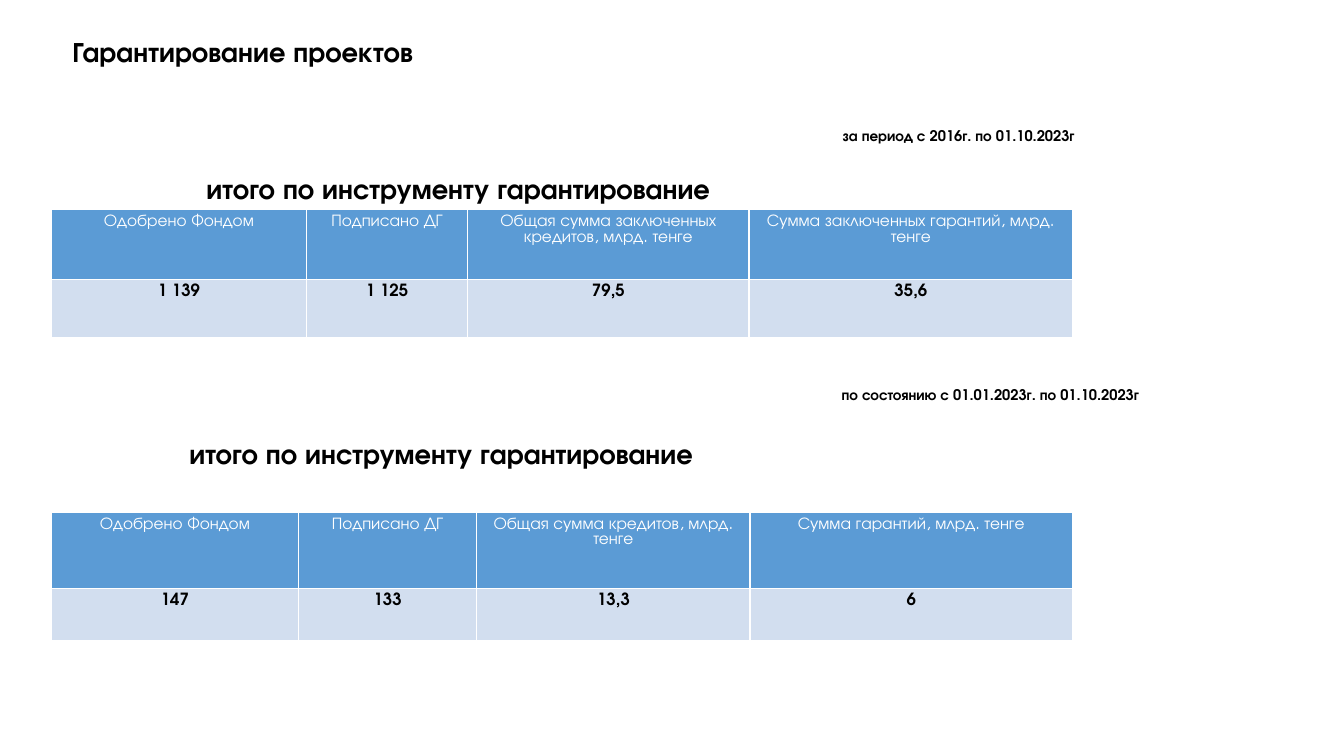
from lxml import etree
from pptx import Presentation
from pptx.dml.color import RGBColor
from pptx.enum.text import MSO_AUTO_SIZE, PP_ALIGN
from pptx.oxml.ns import qn
from pptx.util import Emu, Pt

CENTER = PP_ALIGN.CENTER
GROW = MSO_AUTO_SIZE.SHAPE_TO_FIT_TEXT
BLANK_LAYOUT = 6
EMU_PER_PX = 9144  # 100 px to the inch


def px(length):
    return Emu(length * EMU_PER_PX)


def color(value):
    return RGBColor.from_string(value)


class GuaranteeSlide:
    FONT = "TeX Gyre Adventor"
    BLACK, WHITE = "000000", "FFFFFF"
    HEADER_FILL, VALUE_FILL = "5B9BD5", "D2DEEF"
    TITLE_SIZE, PERIOD_SIZE, CELL_SIZE = 20, 10.5, 12
    CELL_LINE = Pt(11)
    BORDER = Pt(1)

    def __init__(self, deck):
        self.page = deck.slides.add_slide(deck.slide_layouts[BLANK_LAYOUT])

    def add_span(self, para, text, size, fill, bold):
        span = para.add_run()
        span.text = text
        font = span.font
        font.name, font.size, font.bold = self.FONT, Pt(size), bold
        font.color.rgb = color(fill)

    def add_text(self, left, top, width, height, text, size, indent=0):
        box = self.page.shapes.add_textbox(px(left), px(top), px(width), px(height))
        frame = box.text_frame
        frame.word_wrap = True
        frame.auto_size = GROW
        para = frame.paragraphs[0]
        if indent:
            para._p.get_or_add_pPr().set("marL", str(px(indent)))
        self.add_span(para, text, size, self.BLACK, True)

    def add_borders(self, cell):
        properties = cell._tc.get_or_add_tcPr()
        for position, side in enumerate(("lnL", "lnR", "lnT", "lnB")):
            line = etree.Element(qn(f"a:{side}"), w=str(self.BORDER))
            fill = etree.SubElement(line, qn("a:solidFill"))
            etree.SubElement(fill, qn("a:srgbClr"), val=self.WHITE)
            properties.insert(position, line)

    def add_cell(self, cell, text, is_header):
        cell.fill.solid()
        cell.fill.fore_color.rgb = color(self.HEADER_FILL if is_header else self.VALUE_FILL)
        self.add_borders(cell)
        para = cell.text_frame.paragraphs[0]
        para.alignment = CENTER
        para.line_spacing = self.CELL_LINE
        text_color = self.WHITE if is_header else self.BLACK
        self.add_span(para, text, self.CELL_SIZE, text_color, not is_header)

    def add_table(self, left, top, widths, heights, rows):
        frame = self.page.shapes.add_table(
            len(rows), len(widths), px(left), px(top), px(sum(widths)), px(sum(heights)))
        table = frame.table
        table.horz_banding = False
        for column, width in zip(table.columns, widths):
            column.width = px(width)
        for row, height in zip(table.rows, heights):
            row.height = px(height)
        for row_index, texts in enumerate(rows):
            for column_index, text in enumerate(texts):
                self.add_cell(table.cell(row_index, column_index), text, row_index == 0)


def main():
    deck = Presentation()
    deck.slide_width, deck.slide_height = px(1333), px(750)
    slide = GuaranteeSlide(deck)
    total_title = "итого по инструменту гарантирование"

    # Slide title
    slide.add_text(62, 29, 479, 44, "Гарантирование проектов", slide.TITLE_SIZE)

    # Totals since 2016
    slide.add_text(826, 121, 319, 28, "за период с 2016г. по 01.10.2023г", slide.PERIOD_SIZE)
    slide.add_text(195, 165, 584, 44, total_title, slide.TITLE_SIZE)
    slide.add_table(51, 208, (253, 160, 279, 321), (69, 58), (
        ("Одобрено Фондом", "Подписано ДГ",
         "Общая сумма заключенных кредитов, млрд. тенге",
         "Сумма заключенных гарантий, млрд. тенге"),
        ("1 139", "1 125", "79,5", "35,6"),
    ))

    # Totals for 2023
    slide.add_text(825, 378, 339, 28, "по состоянию с 01.01.2023г. по 01.10.2023г",
                   slide.PERIOD_SIZE)
    slide.add_text(117, 428, 735, 44, total_title, slide.TITLE_SIZE, indent=61)
    slide.add_table(51, 508, (245, 177, 271, 320), (76, 52), (
        ("Одобрено Фондом", "Подписано ДГ",
         "Общая сумма кредитов, млрд. тенге", "Сумма гарантий, млрд. тенге"),
        ("147", "133", "13,3", "6"),
    ))

    deck.save("out.pptx")


if __name__ == "__main__":
    main()
